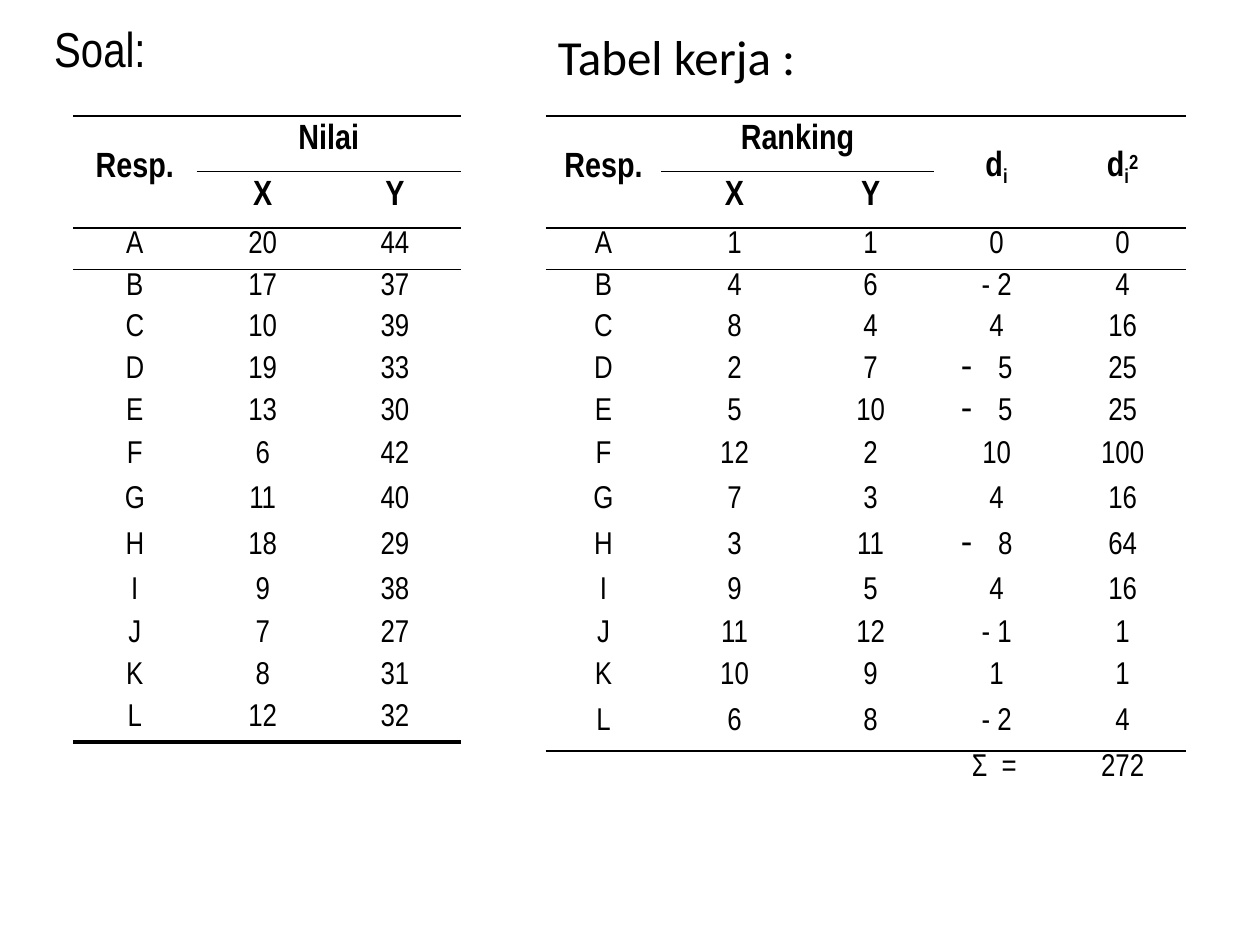
from lxml import etree
from pptx import Presentation
from pptx.dml.color import RGBColor
from pptx.enum.text import MSO_ANCHOR, MSO_AUTO_SIZE, PP_ALIGN
from pptx.oxml.ns import qn
from pptx.util import Inches, Pt

TOP, MIDDLE = MSO_ANCHOR.TOP, MSO_ANCHOR.MIDDLE
LEFT, CENTER, RIGHT = PP_ALIGN.LEFT, PP_ALIGN.CENTER, PP_ALIGN.RIGHT
NO_AUTOFIT = MSO_AUTO_SIZE.NONE

COLORS = {"ink": "000000"}
NARROW = "Arial Narrow"
NO_STYLE = "{2D5ABB26-0587-4C30-8999-92F81FD0307C}"
TITLE_ONLY = 5

HEADER_HEIGHTS = [0.44, 0.45]
BODY_HEIGHTS = [0.33] * 5 + [0.36] * 4 + [0.33] * 2

RESPONDENTS = "ABCDEFGHIJKL"
SCORES_X = [20, 17, 10, 19, 13, 6, 11, 18, 9, 7, 8, 12]
SCORES_Y = [44, 37, 39, 33, 30, 42, 40, 29, 38, 27, 31, 32]
RANKS_X = [1, 4, 8, 2, 5, 12, 7, 3, 9, 11, 10, 6]
RANKS_Y = [1, 6, 4, 7, 10, 2, 3, 11, 5, 12, 9, 8]
DIFFERENCES = ["0", "- 2", "4", "- 5", "- 5", "10", "4", "- 8", "4", "- 1", "1", "- 2"]
SQUARES = [0, 4, 16, 25, 25, 100, 16, 64, 16, 1, 1, 4]
DASH_BULLET_RESPONDENTS = "DEH"


def write_text(frame, text, font=NARROW, size=18, bold=False, align=CENTER,
               line_spacing=None, bullet=None):
    """Write a string, or a list of (text, baseline percent) pairs."""
    paragraph = frame.paragraphs[0]
    paragraph.alignment = align
    if line_spacing:
        paragraph.line_spacing = line_spacing
    if bullet:
        properties = paragraph._p.get_or_add_pPr()
        etree.SubElement(properties, qn("a:buChar")).set("char", bullet)
    pieces = [(text, 0)] if isinstance(text, str) else text
    for piece, baseline in pieces:
        run = paragraph.add_run()
        run.text = piece
        run.font.name = font
        run.font.size = Pt(size)
        run.font.bold = bold
        run.font.color.rgb = RGBColor.from_string(COLORS["ink"])
        if baseline:
            run._r.get_or_add_rPr().set("baseline", str(baseline * 1000))


def place_heading(shape, text, left, top, width, height, anchor, font):
    shape.left, shape.top = Inches(left), Inches(top)
    shape.width, shape.height = Inches(width), Inches(height)
    frame = shape.text_frame
    frame.word_wrap = True
    frame.auto_size = NO_AUTOFIT
    frame.vertical_anchor = anchor
    write_text(frame, text, font=font, size=28, align=LEFT, line_spacing=0.8)


def rule_row(table, row, columns, edge="a:lnT", width=1):
    """Draw a horizontal rule on one edge of the given cells."""
    for column in columns:
        properties = table.cell(row, column)._tc.get_or_add_tcPr()
        line = etree.Element(qn(edge), w=str(Pt(width)))
        fill = etree.SubElement(line, qn("a:solidFill"))
        etree.SubElement(fill, qn("a:srgbClr")).set("val", COLORS["ink"])
        properties.insert(0, line)


def add_plain_table(slide, left, top, widths, heights):
    shape = slide.shapes.add_table(
        len(heights), len(widths), Inches(left), Inches(top),
        Inches(sum(widths)), Inches(sum(heights)))
    table = shape.table
    table.first_row = table.horz_banding = False
    table._tbl.tblPr.find(qn("a:tableStyleId")).text = NO_STYLE
    for column, width in zip(table.columns, widths):
        column.width = Inches(width)
    for row, height in zip(table.rows, heights):
        row.height = Inches(height)
    for cell in table.iter_cells():
        cell.fill.background()
        cell.vertical_anchor = MIDDLE
        cell.margin_left = cell.margin_right = Inches(0.05)
        cell.margin_top, cell.margin_bottom = Inches(0), Inches(0.05)
    return table


def fill_header(table, group, extra_labels=()):
    """Two header rows: a group over X and Y, the other labels span both."""
    table.cell(0, 1).merge(table.cell(0, 2))
    labels = {(0, 0): "Resp.", (0, 1): group, (1, 1): "X", (1, 2): "Y"}
    labels.update({(0, 3 + i): label for i, label in enumerate(extra_labels)})
    for (row, column), label in labels.items():
        if row == 0 and column != 1:
            table.cell(0, column).merge(table.cell(1, column))
        write_text(table.cell(row, column).text_frame, label, size=20, bold=True)
    every_column = range(len(table.columns))
    rule_row(table, 0, every_column)
    rule_row(table, 1, (1, 2))
    rule_row(table, 2, every_column)


def fill_body(table, *columns):
    for row, values in enumerate(zip(RESPONDENTS, *columns), start=2):
        for column, value in enumerate(values):
            text, bullet = str(value), None
            if column == 3 and values[0] in DASH_BULLET_RESPONDENTS:
                text, bullet = text[1:], "-"
            write_text(table.cell(row, column).text_frame, text, bullet=bullet)


def add_score_table(slide):
    heights = HEADER_HEIGHTS + BODY_HEIGHTS + [0.33]
    table = add_plain_table(slide, 0.58, 0.92, [0.98, 1.05, 1.05], heights)
    fill_header(table, "Nilai")
    fill_body(table, SCORES_X, SCORES_Y)
    rule_row(table, len(heights) - 1, range(3), edge="a:lnB", width=2.25)


def add_work_table(slide):
    heights = HEADER_HEIGHTS + BODY_HEIGHTS + [0.4, 0.33]
    table = add_plain_table(slide, 4.33, 0.92, [0.92, 1.16, 1, 1, 1], heights)
    difference = [("d", 0), ("i", -20)]
    fill_header(table, "Ranking", [difference, difference + [("2", 20)]])
    fill_body(table, RANKS_X, RANKS_Y, DIFFERENCES, SQUARES)

    # Sum row
    last = len(heights) - 1
    label = table.cell(last, 0)
    label.merge(table.cell(last, 3))
    label.margin_right = Inches(0.34)
    write_text(label.text_frame, "Σ  =", align=RIGHT)
    write_text(table.cell(last, 4).text_frame, str(sum(SQUARES)))
    rule_row(table, last, range(5))


def main():
    presentation = Presentation()
    presentation.slide_width, presentation.slide_height = Inches(10), Inches(7.5)
    slide = presentation.slides.add_slide(presentation.slide_layouts[TITLE_ONLY])

    # Headings
    place_heading(slide.shapes.title, "Soal:", 0.33, 0.17, 3.25, 0.5, MIDDLE, NARROW)
    work_heading = slide.shapes.add_textbox(0, 0, 0, 0)
    place_heading(work_heading, "Tabel kerja :", 4.33, 0.25, 3.08, 0.47, TOP, "Calibri")

    # Tables
    add_score_table(slide)
    add_work_table(slide)
    presentation.save("out.pptx")


if __name__ == "__main__":
    main()
